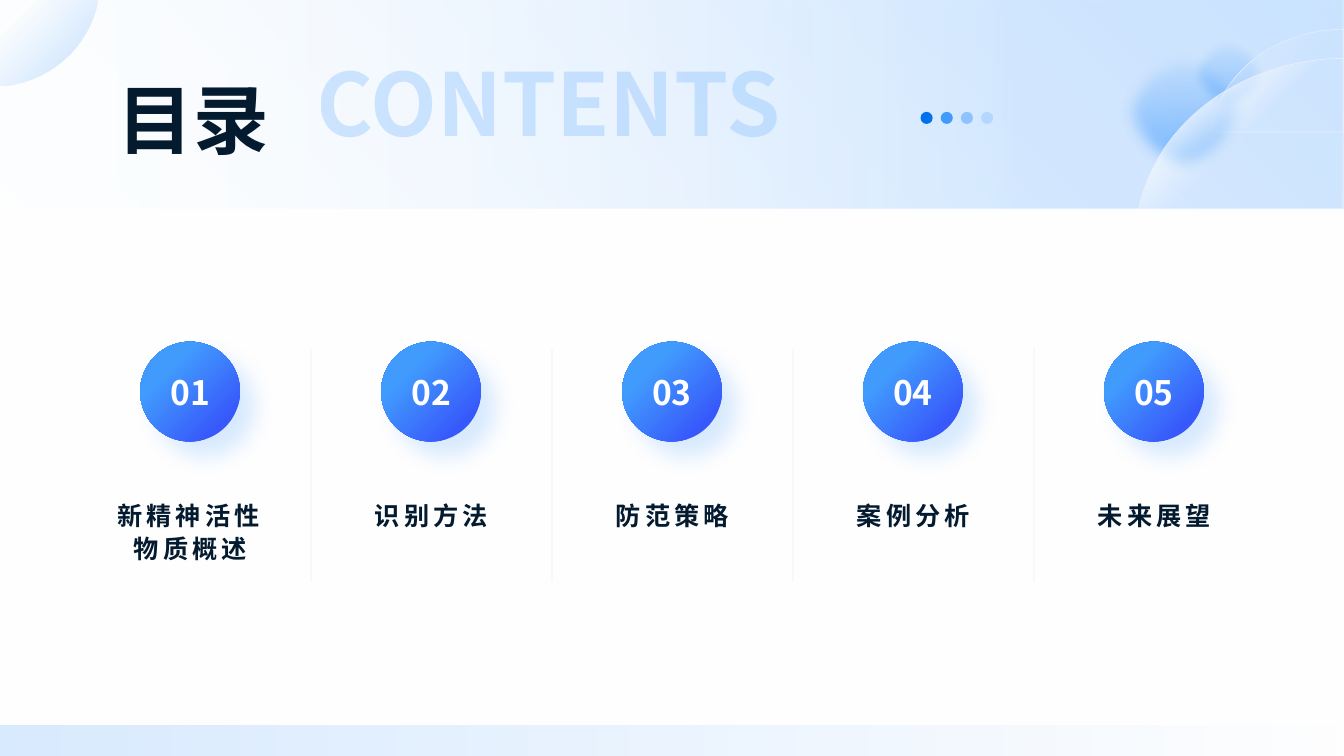
import pptx
import pptx.dml.color
import pptx.enum.shapes
import pptx.enum.text
import pptx.oxml
import pptx.oxml.ns
import pptx.util
from lxml import etree
from pptx.util import Inches

COLORS = {
    "white": "FFFFFF", "panel": "FEFEFF", "blue": "419BFD", "indigo": "3758FB",
    "ink": "031A2F", "footer": "D9EBFF", "rim": "E6EFFE", "divider": "D7DEFE",
    "dot1": "0272EC", "dot3": "8DC3FE", "dot4": "B3D7FE",
}
CJK = "Noto Sans CJK SC"
RECT = pptx.enum.shapes.MSO_SHAPE.RECTANGLE
OVAL = pptx.enum.shapes.MSO_SHAPE.OVAL
CENTER = pptx.enum.text.PP_ALIGN.CENTER
MIDDLE = pptx.enum.text.MSO_ANCHOR.MIDDLE
NS = 'xmlns:a="http://schemas.openxmlformats.org/drawingml/2006/main"'

TOPICS = ["新精神活性物质概述", "识别方法", "防范策略", "案例分析", "未来展望"]
FIRST_CENTER, PITCH = 1.89, 2.39


def rgb(name):
    return pptx.dml.color.RGBColor.from_string(COLORS[name])


def set_alpha(element, percent):
    """Make the colour inside a fill, line or run partly transparent."""
    color = element.find(".//" + pptx.oxml.ns.qn("a:srgbClr"))
    etree.SubElement(color, pptx.oxml.ns.qn("a:alpha"), val=str(percent * 1000))


def set_gradient(sp, angle, stops):
    """Fill with stops of (position, colour, opacity), angle clockwise."""
    stops_xml = "".join(
        f'<a:gs pos="{pos * 1000}"><a:srgbClr val="{COLORS[name]}">'
        f'<a:alpha val="{alpha * 1000}"/></a:srgbClr></a:gs>'
        for pos, name, alpha in stops)
    sp.fill.background()
    no_fill = sp._element.spPr.find(pptx.oxml.ns.qn("a:noFill"))
    no_fill.getparent().replace(no_fill, pptx.oxml.parse_xml(
        f'<a:gradFill {NS} rotWithShape="1"><a:gsLst>{stops_xml}</a:gsLst>'
        f'<a:lin ang="{angle * 60000}" scaled="0"/></a:gradFill>'))


def add_effect(sp, xml):
    effects = sp._element.spPr.find(pptx.oxml.ns.qn("a:effectLst"))
    effects.append(pptx.oxml.parse_xml(xml))


def paint(sp, fill):
    """Apply a colour name or an (angle, stops) gradient, without a shadow."""
    if isinstance(fill, str):
        sp.fill.solid()
        sp.fill.fore_color.rgb = rgb(fill)
    else:
        set_gradient(sp, *fill)
    sp.line.fill.background()
    sp.shadow.inherit = False


def add_shape(s, kind, left, top, width, height, fill):
    sp = s.shapes.add_shape(kind, Inches(left), Inches(top), Inches(width), Inches(height))
    paint(sp, fill)
    return sp


def add_soft_ball(s, left, top, size, alpha, blur):
    sp = add_shape(s, OVAL, left, top, size, size,
                   (90, [(0, "blue", 0), (100, "blue", alpha)]))
    add_effect(sp, f'<a:softEdge {NS} rad="{Inches(blur)}"/>')


def bezier(p0, p1, p2, p3, steps=40):
    points = []
    for i in range(steps + 1):
        t = i / steps
        weights = ((1 - t) ** 3, 3 * t * (1 - t) ** 2, 3 * t * t * (1 - t), t ** 3)
        points.append(tuple(sum(w * p[axis] for w, p in zip(weights, (p0, p1, p2, p3)))
                            for axis in (0, 1)))
    return points


def add_outline(s, points, fill, line=None):
    emu = [(Inches(x), Inches(y)) for x, y in points]
    builder = s.shapes.build_freeform(*emu[0], scale=1.0)
    builder.add_line_segments(emu[1:], close=True)
    sp = builder.convert_to_shape()
    paint(sp, fill)
    if line:
        sp.line.color.rgb = rgb(line)
        sp.line.width = pptx.util.Pt(0.5)


def format_text(tf, size, color, latin=CJK, spacing=None):
    for r in tf.paragraphs[0].runs:
        r.font.size = pptx.util.Pt(size)
        r.font.bold = True
        r.font.name = latin
        r.font.color.rgb = rgb(color)
        rPr = r._r.get_or_add_rPr()
        rPr.find(pptx.oxml.ns.qn("a:latin")).addnext(
            pptx.oxml.parse_xml(f'<a:ea {NS} typeface="{CJK}"/>'))
        if spacing:
            rPr.set("spc", str(spacing * 100))


def clear_margins(tf):
    tf.margin_left = tf.margin_right = tf.margin_top = tf.margin_bottom = 0


def add_background(s):
    add_shape(s, RECT, 0, 0, 13.33, 7.48, (315, [(0, "white", 0), (100, "blue", 15)]))
    add_soft_ball(s, 11.78, 0.32, 0.81, 50, 0.1)
    add_outline(s, [(13.33, 0.29), (13.33, 1.31), (12, 1.31)]
                + bezier((12.02, 1.23), (12.14, 0.69), (12.68, 0.29), (13.33, 0.29)),
                (225, [(39, "white", 5), (83, "white", 50)]), "white")
    add_shape(s, RECT, 0, 0, 13.33, 7.5, (0, [(0, "white", 0), (76, "blue", 15)]))
    add_soft_ball(s, 11.07, 0.43, 1.34, 70, 0.15)
    add_outline(s, [(13.33, 0.58), (13.33, 2.16), (11.28, 2.16)]
                + bezier((11.3, 2.03), (11.5, 1.2), (12.33, 0.58), (13.33, 0.58)),
                (225, [(50, "white", 5), (71, "white", 68)]), "rim")
    add_shape(s, RECT, 0, 2.07, 13.33, 5.43, "panel")
    add_shape(s, RECT, 0, 7.2, 13.33, 0.3, (180, [(0, "footer", 0), (100, "footer", 100)]))
    add_outline(s, [(0, 0), (0.97, 0)]
                + bezier((0.97, 0.03), (0.88, 0.47), (0.51, 0.8), (0.06, 0.85)) + [(0, 0.85)],
                (45, [(20, "blue", 0), (100, "blue", 30)]))
    for i, color in enumerate(["dot1", "blue", "dot3", "dot4"]):
        add_shape(s, OVAL, 9.13 + 0.2 * i, 1.11, 0.12, 0.12, color)


def add_title(s):
    title = s.shapes.title
    title.left, title.top = Inches(1.17), Inches(0.58)
    title.width, title.height = Inches(1.92), Inches(1.18)
    tf = title.text_frame
    tf.text = "目录"
    tf.auto_size = pptx.enum.text.MSO_AUTO_SIZE.NONE
    tf.vertical_anchor = MIDDLE
    clear_margins(tf)
    tf.paragraphs[0].alignment = pptx.enum.text.PP_ALIGN.LEFT
    format_text(tf, 54, "ink", "Arial")
    s.shapes._spTree.append(title._element)  # in front of the background


def add_subtitle(s):
    box = s.shapes.add_textbox(Inches(3.14), Inches(0.49), Inches(4.75), Inches(1.25))
    tf = box.text_frame
    tf.text = "CONTENTS"
    clear_margins(tf)
    format_text(tf, 62, "dot3")
    set_alpha(tf.paragraphs[0].runs[0]._r, 40)


def add_topic(s, number, topic, center):
    badge = add_shape(s, OVAL, center - 0.5, 3.39, 0.99, 0.99,
                      (225, [(17, "indigo", 100), (72, "blue", 100)]))
    add_effect(badge, f'<a:outerShdw {NS} blurRad="190500" dist="190500" dir="2700000" '
                      f'algn="tl" rotWithShape="0"><a:srgbClr val="{COLORS["blue"]}">'
                      f'<a:alpha val="20000"/></a:srgbClr></a:outerShdw>')
    tf = badge.text_frame
    tf.text = f"{number:02d}"
    tf.word_wrap = False
    tf.vertical_anchor = MIDDLE
    tf.paragraphs[0].alignment = CENTER
    format_text(tf, 24, "white")

    box = s.shapes.add_textbox(Inches(center - 0.97), Inches(4.88), Inches(1.94), Inches(1.49))
    tf = box.text_frame
    tf.text = topic
    tf.word_wrap = True
    tf.paragraphs[0].alignment = CENTER
    tf.paragraphs[0].line_spacing = 1.1
    format_text(tf, 18, "ink", spacing=3)


def add_divider(s, x):
    line = s.shapes.add_connector(pptx.enum.shapes.MSO_CONNECTOR.STRAIGHT,
                                  Inches(x), Inches(3.46), Inches(x), Inches(5.77))
    line.line.color.rgb = rgb("divider")
    line.line.width = pptx.util.Pt(0.5)
    set_alpha(line._element.spPr, 50)
    etree.SubElement(line._element.spPr, pptx.oxml.ns.qn("a:effectLst"))


def main():
    prs = pptx.Presentation()
    prs.slide_width, prs.slide_height = Inches(13.33), Inches(7.5)
    s = prs.slides.add_slide(prs.slide_layouts[5])
    add_background(s)
    add_title(s)
    add_subtitle(s)
    for i, topic in enumerate(TOPICS):
        center = FIRST_CENTER + PITCH * i
        add_topic(s, i + 1, topic, center)
        if i < len(TOPICS) - 1:
            add_divider(s, center + PITCH / 2)
    prs.save("out.pptx")


if __name__ == "__main__":
    main()
